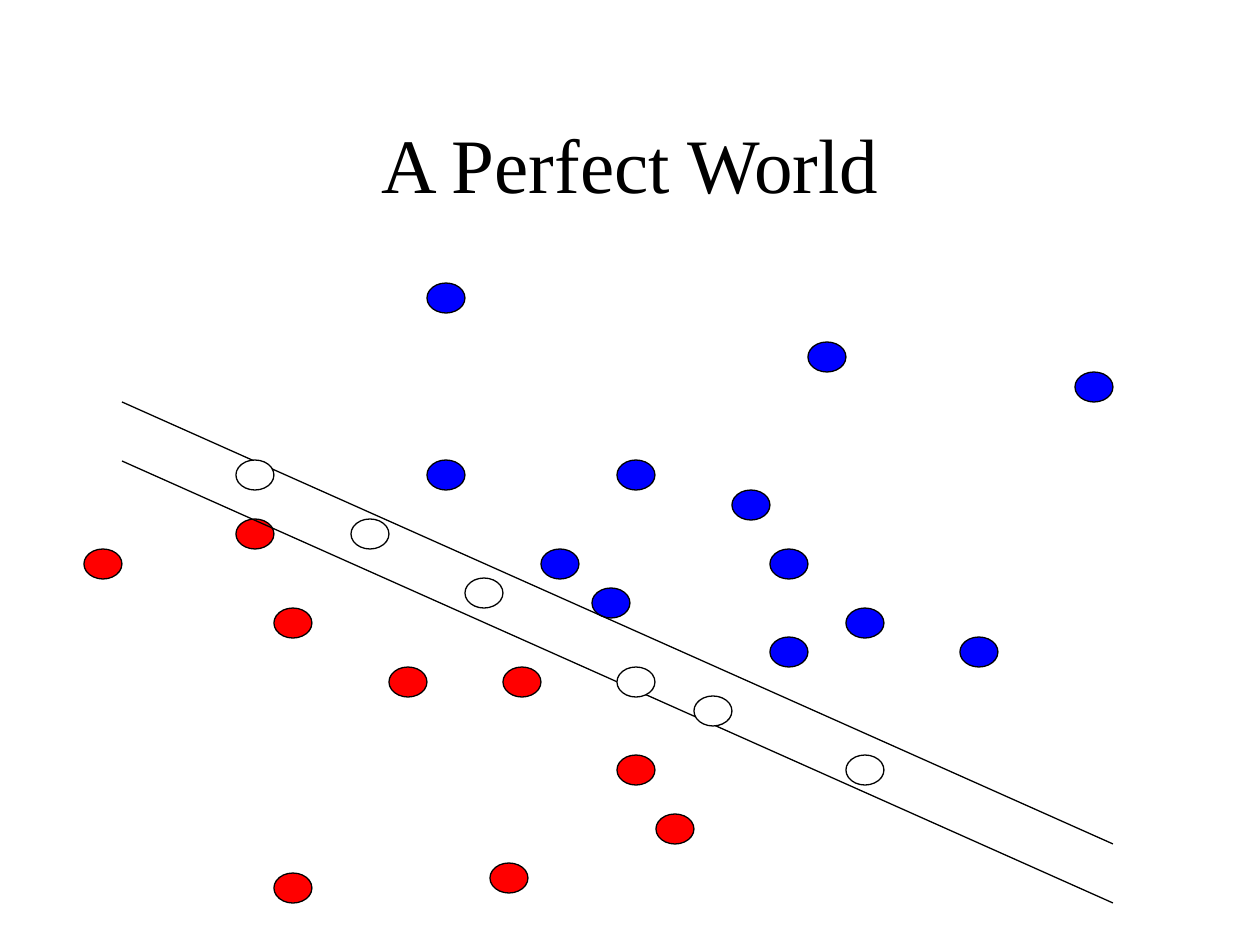
"""Build the slide "A Perfect World": two point classes split by a margin of unlabelled points."""
from lxml import etree
from pptx import Presentation
from pptx import util as u
from pptx.dml.color import RGBColor
from pptx.enum import shapes, text
from pptx.oxml.ns import qn

PX = 914400 / 126
THEME = {
    "ink": RGBColor(0, 0, 0),
    "red": RGBColor(255, 0, 0),
    "blue": RGBColor(0, 0, 255),
    "white": RGBColor(255, 255, 255),
    "font": "Times New Roman",
    "title": u.Pt(44),
    "stroke": u.Pt(0.75),
}
DOT_WIDTH, DOT_HEIGHT = 38, 30
RED_CENTRES = [(103, 564), (255, 534), (293, 623), (293, 888), (408, 682),
               (636, 770), (522, 682), (509, 878), (675, 829)]
BLUE_CENTRES = [(560, 564), (446, 475), (751, 505), (636, 475), (979, 652), (789, 652),
                (865, 623), (789, 564), (827, 357), (611, 603), (1094, 387), (446, 298)]
WHITE_CENTRES = [(255, 475), (370, 534), (484, 593), (713, 711), (636, 682), (865, 770)]


def px(*lengths):
    return [u.Emu(round(length * PX)) for length in lengths]


def add_dots(page, centres, colour):
    for x, y in centres:
        dot = page.shapes.add_shape(
            shapes.MSO_SHAPE.OVAL,
            *px(x - DOT_WIDTH / 2, y - DOT_HEIGHT / 2, DOT_WIDTH, DOT_HEIGHT))
        dot.shadow.inherit = False
        dot.fill.solid()
        dot.fill.fore_color.rgb = colour
        dot.line.color.rgb = THEME["ink"]
        dot.line.width = THEME["stroke"]


deck = Presentation()
deck.slide_width, deck.slide_height = px(1260, 945)
page = deck.slides.add_slide(deck.slide_layouts[6])

box = page.shapes.add_textbox(*px(94, 84, 1072, 158))
frame = box.text_frame
for name, value in {"word_wrap": True, "vertical_anchor": text.MSO_ANCHOR.MIDDLE}.items():
    setattr(frame, name, value)
para = frame.paragraphs[0]
para.alignment = text.PP_ALIGN.CENTER
span = para.add_run()
span.text = "A Perfect World"
for name, value in {"name": THEME["font"], "size": THEME["title"]}.items():
    setattr(span.font, name, value)
span.font.color.rgb = THEME["ink"]

add_dots(page, RED_CENTRES, THEME["red"])
add_dots(page, BLUE_CENTRES, THEME["blue"])

for top in (461, 402):
    margin = page.shapes.add_connector(
        shapes.MSO_CONNECTOR.STRAIGHT, *px(122, top, 1113, top + 442))
    margin.line.color.rgb = THEME["ink"]
    margin.line.width = THEME["stroke"]
    etree.SubElement(margin._element.spPr, qn("a:effectLst"))

add_dots(page, WHITE_CENTRES, THEME["white"])

deck.save("out.pptx")
